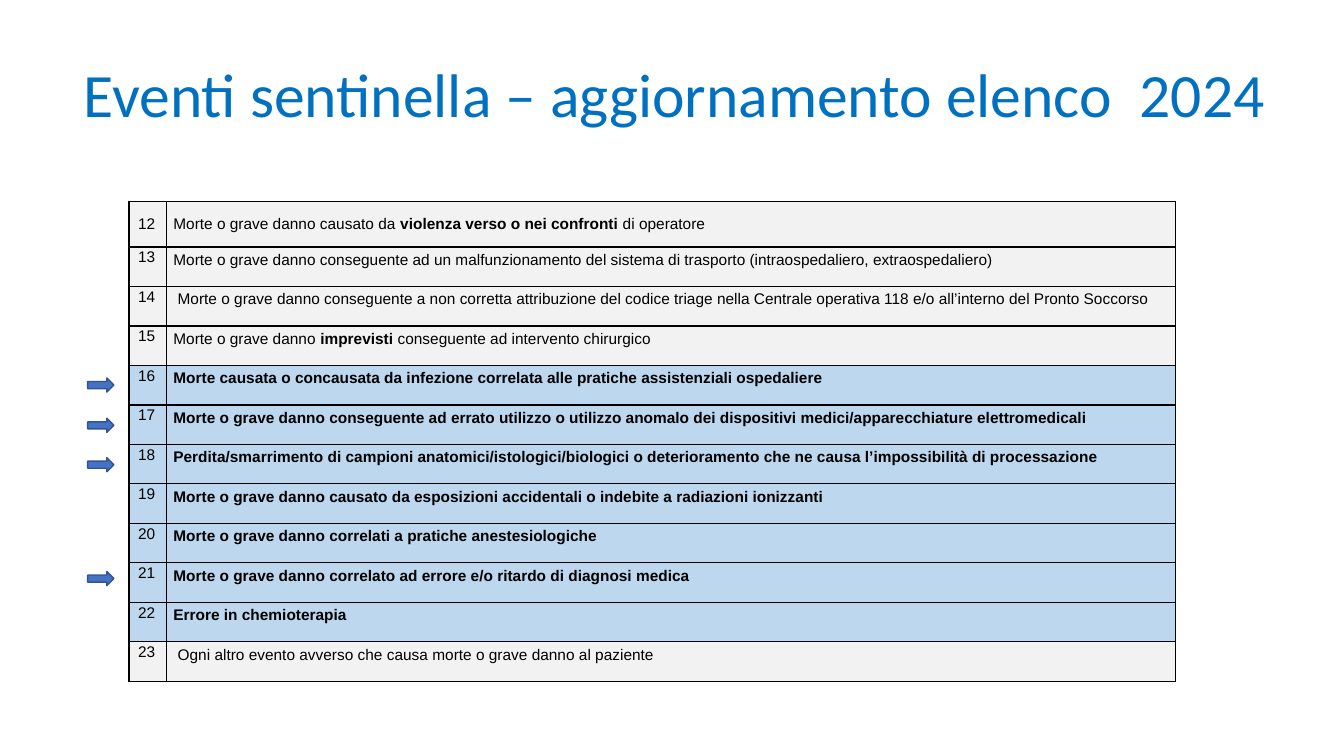
from lxml import etree
from pptx import Presentation
from pptx.dml.color import RGBColor
from pptx.enum.shapes import MSO_SHAPE
from pptx.enum.text import MSO_ANCHOR, PP_ALIGN
from pptx.oxml.ns import qn
from pptx.util import Inches, Pt

RIGHT_ARROW = MSO_SHAPE.RIGHT_ARROW
TOP, MIDDLE, BOTTOM = MSO_ANCHOR.TOP, MSO_ANCHOR.MIDDLE, MSO_ANCHOR.BOTTOM
LEFT, CENTER, JUSTIFY = PP_ALIGN.LEFT, PP_ALIGN.CENTER, PP_ALIGN.JUSTIFY

COLORS = {
    "title": "0070C0",
    "text": "000000",
    "grid": "000000",
    "plain": "F2F2F2",
    "new": "BDD7EE",
    "arrow": "4472C4",
    "arrow_line": "325491",
}
FIRST_NUMBER = 12
NEW_EVENTS = range(16, 23)
ARROW_TOPS = [3.75, 4.15, 4.54, 5.67]

# Every second part of an event, split at "|", is bold.
EVENTS = [
    "Morte o grave danno causato da |violenza verso o nei confronti |di operatore",
    "Morte o grave danno conseguente ad un malfunzionamento del sistema di trasporto "
    "(intraospedaliero, extraospedaliero)",
    " Morte o grave danno conseguente a non corretta attribuzione del codice triage "
    "nella Centrale operativa 118 e/o all’interno del Pronto Soccorso",
    "Morte o grave danno |imprevisti |conseguente ad intervento chirurgico",
    "|Morte causata o concausata da infezione correlata alle pratiche assistenziali ospedaliere",
    "|Morte o grave danno conseguente ad errato utilizzo o utilizzo anomalo dei "
    "dispositivi medici/apparecchiature elettromedicali",
    "|Perdita/smarrimento di campioni anatomici/istologici/biologici o deterioramento "
    "che ne causa l’impossibilità di processazione",
    "|Morte o grave danno causato da esposizioni accidentali o indebite a radiazioni ionizzanti",
    "|Morte o grave danno correlati a pratiche anestesiologiche",
    "|Morte o grave danno correlato ad errore e/o ritardo di diagnosi medica",
    "|Errore in chemioterapia",
    " Ogni altro evento avverso che causa morte o grave danno al paziente",
]


def rgb(name):
    return RGBColor.from_string(COLORS[name])


def format_cell(cell, fill, right_margin, anchor):
    """Set margins, anchor, four 1 pt borders and fill of a table cell."""
    cell.margin_left, cell.margin_right = Inches(0.07), Inches(right_margin)
    cell.margin_top, cell.margin_bottom = Inches(0.02), Inches(0.14)
    cell.vertical_anchor = anchor
    tc_pr = cell._tc.get_or_add_tcPr()
    for side in ("a:lnL", "a:lnR", "a:lnT", "a:lnB"):
        ln = etree.SubElement(tc_pr, qn(side), w=str(Pt(1)))
        solid = etree.SubElement(ln, qn("a:solidFill"))
        etree.SubElement(solid, qn("a:srgbClr"), val=COLORS["grid"])
    cell.fill.solid()
    cell.fill.fore_color.rgb = rgb(fill)
    # The schema wants the fill after the borders.
    tc_pr.append(tc_pr.find(qn("a:solidFill")))


prs = Presentation()
prs.slide_width, prs.slide_height = Inches(13.33), Inches(7.5)
slide = prs.slides.add_slide(prs.slide_layouts[6])

# Title
title = slide.shapes.add_textbox(Inches(0.73), Inches(0.24), Inches(12.22), Inches(1.45))
tf = title.text_frame
tf.word_wrap = True
tf.vertical_anchor = MIDDLE
p = tf.paragraphs[0]
p.text = "Eventi sentinella – aggiornamento elenco  2024"
p.line_spacing = 0.9
p.space_after = Pt(6)
p.font.size, p.font.name = Pt(44), "Calibri"
p.font.color.rgb = rgb("title")

# Table of events
table = slide.shapes.add_table(
    len(EVENTS), 2, Inches(1.28), Inches(2), Inches(10.38), Inches(4.76)
).table
table.first_row = table.horz_banding = False
table.columns[0].width, table.columns[1].width = Inches(0.37), Inches(10.01)

for i, event in enumerate(EVENTS):
    number = FIRST_NUMBER + i
    table.rows[i].height = Inches(0.45 if i == 0 else 4.31 / 11)
    fill = "new" if number in NEW_EVENTS else "plain"
    anchor = BOTTOM if i == 0 else TOP
    number_cell, event_cell = table.cell(i, 0), table.cell(i, 1)
    format_cell(number_cell, fill, 0.09, anchor)
    format_cell(event_cell, fill, 0.07, anchor)

    number_p = number_cell.text_frame.paragraphs[0]
    number_p.text = str(number)
    number_p.alignment = CENTER
    event_p = event_cell.text_frame.paragraphs[0]
    event_p.alignment = LEFT if i == 0 else JUSTIFY
    event_p.line_spacing = 1.15
    for j, part in enumerate(event.split("|")):
        if part:
            r = event_p.add_run()
            r.text = part
            r.font.bold = j % 2 == 1

    for p in (number_p, event_p):
        p.font.size, p.font.name = Pt(11), "Arial"
        p.font.color.rgb = rgb("text")

# Arrows beside the table
for top in ARROW_TOPS:
    sp = slide.shapes.add_shape(RIGHT_ARROW, Inches(0.87), Inches(top), Inches(0.26), Inches(0.14))
    sp.shadow.inherit = False
    sp.fill.solid()
    sp.fill.fore_color.rgb = rgb("arrow")
    sp.line.color.rgb = rgb("arrow_line")
    sp.line.width = Pt(1)

prs.save("out.pptx")
